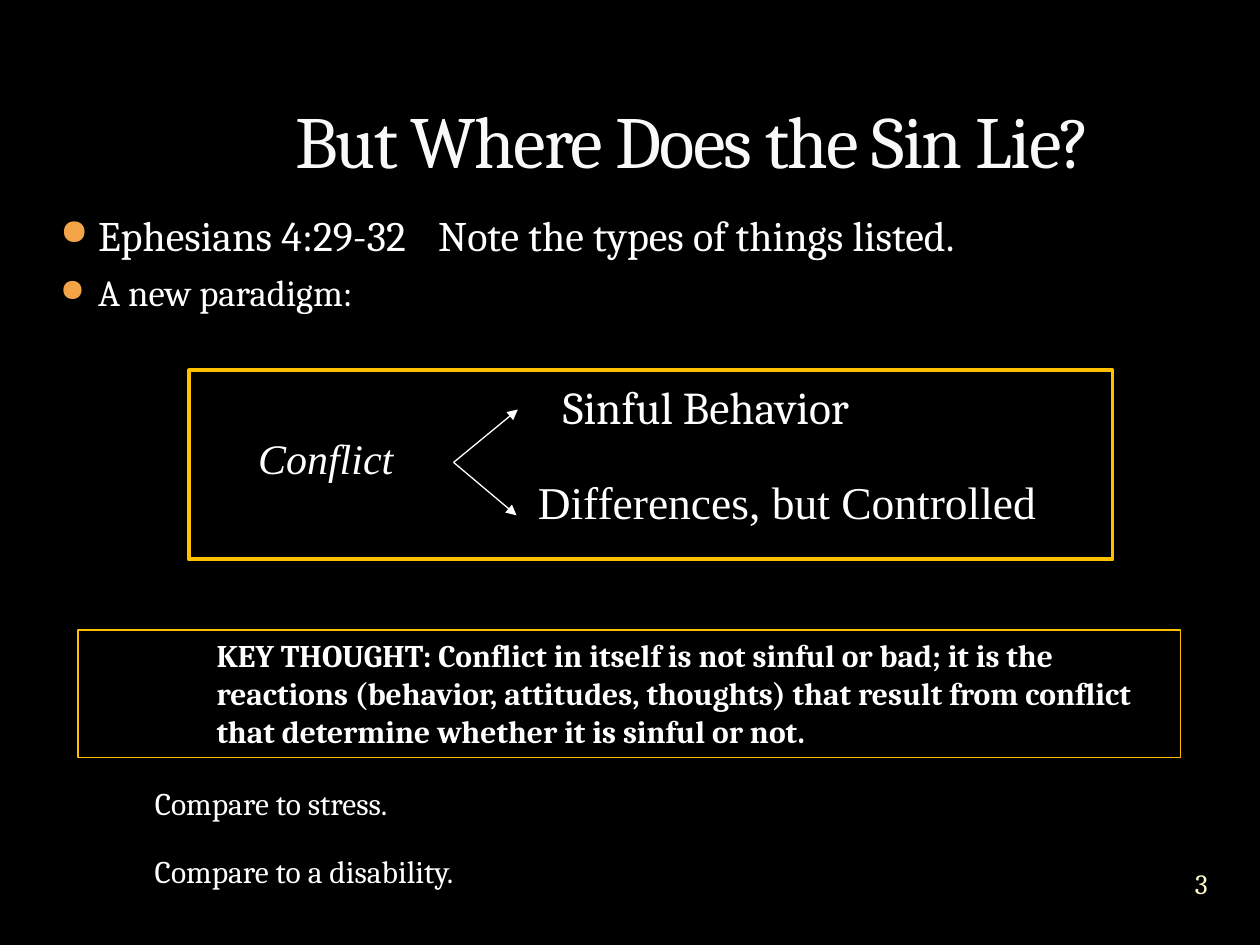
import pptx
import pptx.util
import pptx.dml.color
import pptx.enum.shapes
import pptx.enum.text
import pptx.oxml.ns
import lxml.etree

Inches = pptx.util.Inches
Pt = pptx.util.Pt
ANCHOR = pptx.enum.text.MSO_ANCHOR
ALIGN = pptx.enum.text.PP_ALIGN

COLORS = {
    "back": "000000",
    "text": "FFFFFF",
    "title": "F9F9F9",
    "gold": "FFC000",
    "dot": "F3A447",
    "page": "FEFAC9",
}


def color(name):
    return pptx.dml.color.RGBColor.from_string(COLORS[name])


def node(parent, tag, **attrs):
    """Add one drawing element to its parent."""
    return lxml.etree.SubElement(parent, pptx.oxml.ns.qn("a:" + tag), attrs)


class Deck:
    """Holds the style and the current slide."""

    font = "Cambria"

    def __init__(self, show):
        self.slide = show.slides.add_slide(show.slide_layouts[6])
        fill = self.slide.background.fill
        fill.solid()
        fill.fore_color.rgb = color("back")

    def put(self, para, text, size, ink="text", **more):
        run = para.add_run()
        run.text = text
        style = {"name": self.font, "size": Pt(size), **more}
        for key, value in style.items():
            setattr(run.font, key, value)
        run.font.color.rgb = color(ink)
        return run

    def label(self, place, text, size, ink="text", frame=None, align=ALIGN.LEFT, **more):
        box = self.slide.shapes.add_textbox(*map(Inches, place))
        style = {"word_wrap": True, **(frame or {})}
        for key, value in style.items():
            setattr(box.text_frame, key, value)
        para = box.text_frame.paragraphs[0]
        para.alignment = align
        return self.put(para, text, size, ink, **more)

    def points(self, place, items):
        box = self.slide.shapes.add_textbox(*map(Inches, place))
        frame = box.text_frame
        frame.word_wrap = True
        for i, (text, size) in enumerate(items):
            para = frame.add_paragraph() if i else frame.paragraphs[0]
            para.space_before = Pt(6)
            props = para._p.get_or_add_pPr()
            props.set("marL", str(Inches(0.3)))
            props.set("indent", str(Inches(-0.3)))
            node(node(props, "buClr"), "srgbClr", val=COLORS["dot"])
            node(props, "buSzPct", val="85000")
            node(props, "buChar", char="●")
            self.put(para, text, size)

    def frame(self, place, width):
        kind = pptx.enum.shapes.MSO_SHAPE.RECTANGLE
        rect = self.slide.shapes.add_shape(kind, *map(Inches, place))
        rect.shadow.inherit = False
        rect.fill.background()
        rect.line.color.rgb = color("gold")
        rect.line.width = Pt(width)
        return rect

    def arrow(self, start, end):
        kind = pptx.enum.shapes.MSO_CONNECTOR.STRAIGHT
        line = self.slide.shapes.add_connector(kind, *map(Inches, start + end))
        line.line.color.rgb = color("text")
        line.line.width = Pt(0.75)
        node(line.line._get_or_add_ln(), "tailEnd", type="triangle")
        node(line._element.spPr, "effectLst")


def main():
    show = pptx.Presentation()
    show.slide_width, show.slide_height = Inches(10), Inches(7.5)
    deck = Deck(show)

    # Title
    title = deck.label((1.5, 0.17, 8, 1.33), "But Where Does the Sin Lie?", 42, "title",
                       {"vertical_anchor": ANCHOR.BOTTOM}, ALIGN.CENTER)
    title._r.get_or_add_rPr().set("spc", "-100")

    # Bullets
    deck.points((0.38, 1.61, 9, 1), [
        ("Ephesians 4:29-32\tNote the types of things listed.", 24),
        ("A new paradigm:", 21),
    ])

    # Key thought
    key = deck.frame((0.62, 5, 8.75, 1.01), 0.75)
    style = {"word_wrap": True, "vertical_anchor": ANCHOR.TOP}
    for name, value in style.items():
        setattr(key.text_frame, name, value)
    para = key.text_frame.paragraphs[0]
    para.alignment = ALIGN.LEFT
    para._p.get_or_add_pPr().set("marL", str(Inches(1)))
    deck.put(para, "KEY THOUGHT: Conflict in itself is not sinful or bad; it is the "
             "reactions (behavior, attitudes, thoughts) that result from conflict "
             "that determine whether it is sinful or not.", 18, bold=True)

    # Comparisons
    for top, wide, text in ((6.17, 2.19, "Compare to stress."),
                            (6.71, 2.74, "Compare to a disability.")):
        deck.label((1.13, top, wide, 0.4), text, 18, frame={"word_wrap": False})

    # Conflict and its two outcomes
    deck.frame((1.5, 2.94, 7.33, 1.5), 2.25)
    times = "Times New Roman"
    deck.label((1.95, 3.38, 1.42, 0.5), "Conflict", 24, name=times, italic=True)
    deck.label((4.37, 2.96, 4, 0.54), "Sinful Behavior", 26)
    deck.label((4.17, 3.71, 4.33, 0.54), "Differences, but Controlled", 26, name=times)
    for end in ((4.11, 3.25), (4.1, 4.09)):
        deck.arrow((3.6, 3.67), end)

    # Page number
    flat = dict.fromkeys(("margin_left", "margin_top", "margin_right", "margin_bottom"), 0)
    deck.label((9.2, 6.76, 0.67, 0.5), "3", 16, "page",
               {"vertical_anchor": ANCHOR.MIDDLE, **flat}, ALIGN.CENTER)

    show.save("out.pptx")


if __name__ == "__main__":
    main()
